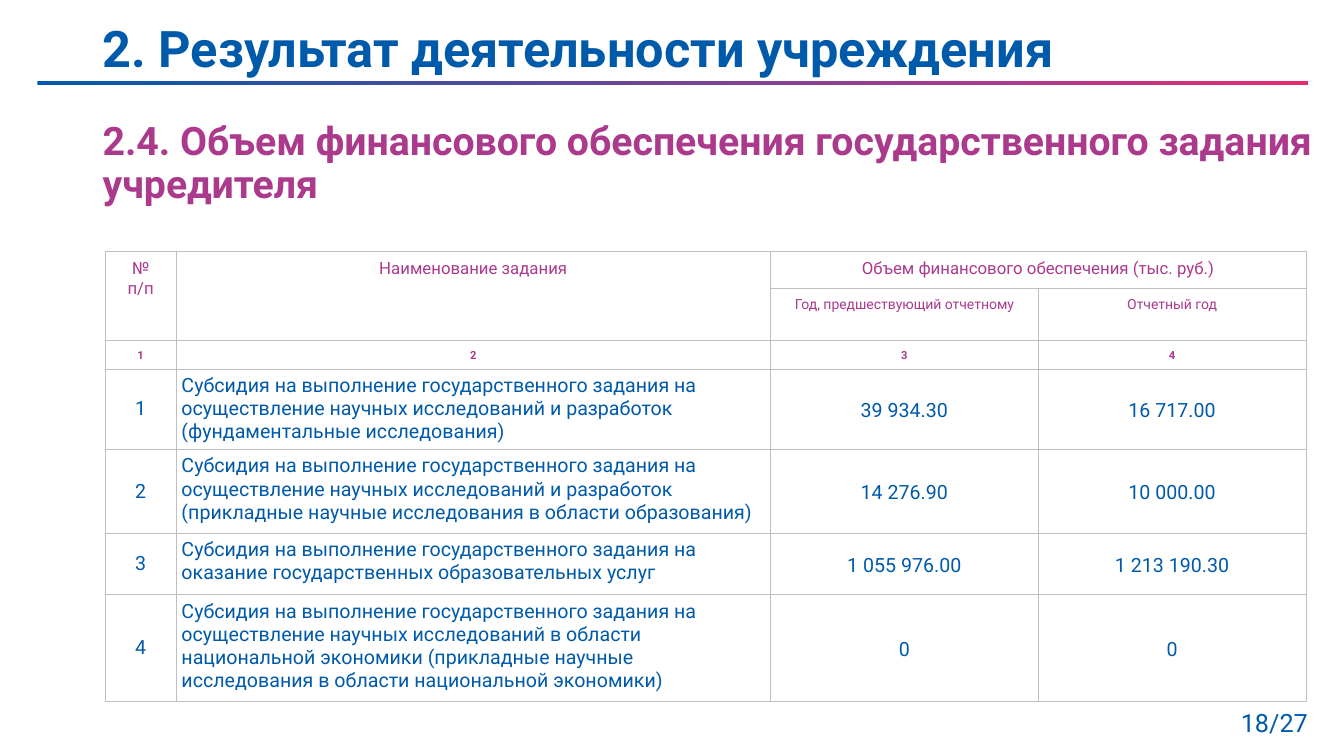
from copy import deepcopy

from pptx import Presentation, util as u
from pptx.dml.color import RGBColor
from pptx.enum import shapes, text
from pptx.oxml import parse_xml
from pptx.oxml.ns import nsdecls, qn

BLUE, PLUM, PINK, GRAY = "005AAA", "AB3A8D", "E72B70", "BFBFBF"
MID, TOP = text.MSO_ANCHOR.MIDDLE, text.MSO_ANCHOR.TOP
LEFT, MEAN, RIGHT = text.PP_ALIGN.LEFT, text.PP_ALIGN.CENTER, text.PP_ALIGN.RIGHT


def paint(code):
    return RGBColor.from_string(code)


def write(frame, words, size=14, color=BLUE, bold=False, align=LEFT,
          space=None, font="Roboto"):
    for i, line in enumerate(words.split("\n")):
        par = frame.add_paragraph() if i else frame.paragraphs[0]
        par.alignment = align
        if space:
            par.line_spacing = space
        run = par.add_run()
        run.text = line
        run.font.name = font
        run.font.size = u.Pt(size)
        run.font.bold = bold
        run.font.color.rgb = paint(color)


class Page:
    COLS = ROWS = 100

    def __init__(self, deck):
        self.wide, self.high = deck.slide_width, deck.slide_height
        self.slide = deck.slides.add_slide(deck.slide_layouts[6])

    def x(self, cols):
        return round(self.wide * cols / self.COLS)

    def y(self, rows):
        return round(self.high * rows / self.ROWS)

    def area(self, left, top, width, height):
        return self.x(left), self.y(top), self.x(width), self.y(height)

    def label(self, box, words, anchor=TOP, **style):
        frame = self.slide.shapes.add_textbox(*self.area(*box)).text_frame
        frame.word_wrap = True
        frame.vertical_anchor = anchor
        write(frame, words, **style)

    def band(self, box, stops):
        bar = self.slide.shapes.add_shape(
            shapes.MSO_SHAPE.RECTANGLE, *self.area(*box))
        bar.shadow.inherit = False
        bar.line.fill.background()
        bar.fill.gradient()
        bar.fill.gradient_angle = 0
        group = bar._element.spPr.find(qn("a:gradFill")).find(qn("a:gsLst"))
        while len(group) < len(stops):
            group.append(deepcopy(group[0]))
        for stop, (place, color) in zip(bar.fill.gradient_stops, stops):
            stop.position = place
            stop.color.rgb = paint(color)

    def cell(self, cell, words="", pad=(0.05,) * 4, anchor=TOP, **style):
        sides = "left", "top", "right", "bottom"
        for side, inch in zip(sides, pad):
            setattr(cell, f"margin_{side}", u.Inches(inch))
        cell.vertical_anchor = anchor
        props = cell._tc.get_or_add_tcPr()
        for side in "LRTB":
            props.append(parse_xml(
                f'<a:ln{side} {nsdecls("a")} w="{u.Pt(0.5)}"><a:solidFill>'
                f'<a:srgbClr val="{GRAY}"/></a:solidFill></a:ln{side}>'))
        cell.fill.background()
        if words:
            write(cell.text_frame, words, **style)

    def table(self, left, top, cols, rows):
        box = self.area(left, top, sum(cols), sum(rows))
        grid = self.slide.shapes.add_table(len(rows), len(cols), *box).table
        grid.first_row = grid.horz_banding = False
        for col, width in zip(grid.columns, cols):
            col.width = self.x(width)
        for row, height in zip(grid.rows, rows):
            row.height = self.y(height)
        return grid


HEAD = [
    (12, False, ["№\nп/п", "Наименование задания",
                 "Объем финансового обеспечения (тыс. руб.)", ""]),
    (10, False, ["", "", "Год, предшествующий отчетному", "Отчетный год"]),
    (8, True, ["1", "2", "3", "4"]),
]
START = "Субсидия на выполнение государственного задания на "
TASKS = [
    ("осуществление научных исследований и разработок "
     "(фундаментальные исследования)", "39 934.30", "16 717.00"),
    ("осуществление научных исследований и разработок (прикладные "
     "научные исследования в области образования)", "14 276.90", "10 000.00"),
    ("оказание государственных образовательных услуг",
     "1 055 976.00", "1 213 190.30"),
    ("осуществление научных исследований в области национальной экономики "
     "(прикладные научные исследования в области национальной экономики)",
     "0", "0"),
]


def main():
    deck = Presentation()
    deck.slide_width, deck.slide_height = u.Inches(13.33), u.Inches(7.5)
    page = Page(deck)

    page.band((2.78, 10.67, 94.52, 0.53), [(0, BLUE), (0.75, PLUM), (1, PINK)])
    page.label((91.3, 92.93, 6.75, 5.33), "18/27", size=18, align=RIGHT)
    page.label((6.9, 15.47, 91.45, 14),
               "2.4. Объем финансового обеспечения государственного "
               "задания учредителя",
               size=28, color=PLUM, bold=True, space=0.9)
    page.label((6.9, 1.33, 86.27, 10.93), "2. Результат деятельности учреждения",
               anchor=MID, size=36, bold=True, space=0.9)

    grid = page.table(7.8, 33.2, [5.33, 44.19, 19.95, 19.9],
                      [4.93, 6.67, 3.73, 10.53, 11.07, 8.13, 14.13])
    for r, (size, bold, names) in enumerate(HEAD):
        for c, name in enumerate(names):
            page.cell(grid.cell(r, c), name, pad=(0.04, 0.08, 0.04, 0.04),
                      size=size, color=PLUM, bold=bold, align=MEAN)
    for r, (task, *sums) in enumerate(TASKS, 1):
        row = r + len(HEAD) - 1
        page.cell(grid.cell(row, 0), str(r), pad=(0.08,) * 4, anchor=MID,
                  align=MEAN)
        page.cell(grid.cell(row, 1), START + task)
        for c, total in enumerate(sums, 2):
            page.cell(grid.cell(row, c), total, anchor=MID, align=MEAN,
                      space=1.15)
    for first, last in [((0, 0), (1, 0)), ((0, 1), (1, 1)), ((0, 2), (0, 3))]:
        grid.cell(*first).merge(grid.cell(*last))

    deck.save("out.pptx")


if __name__ == "__main__":
    main()
